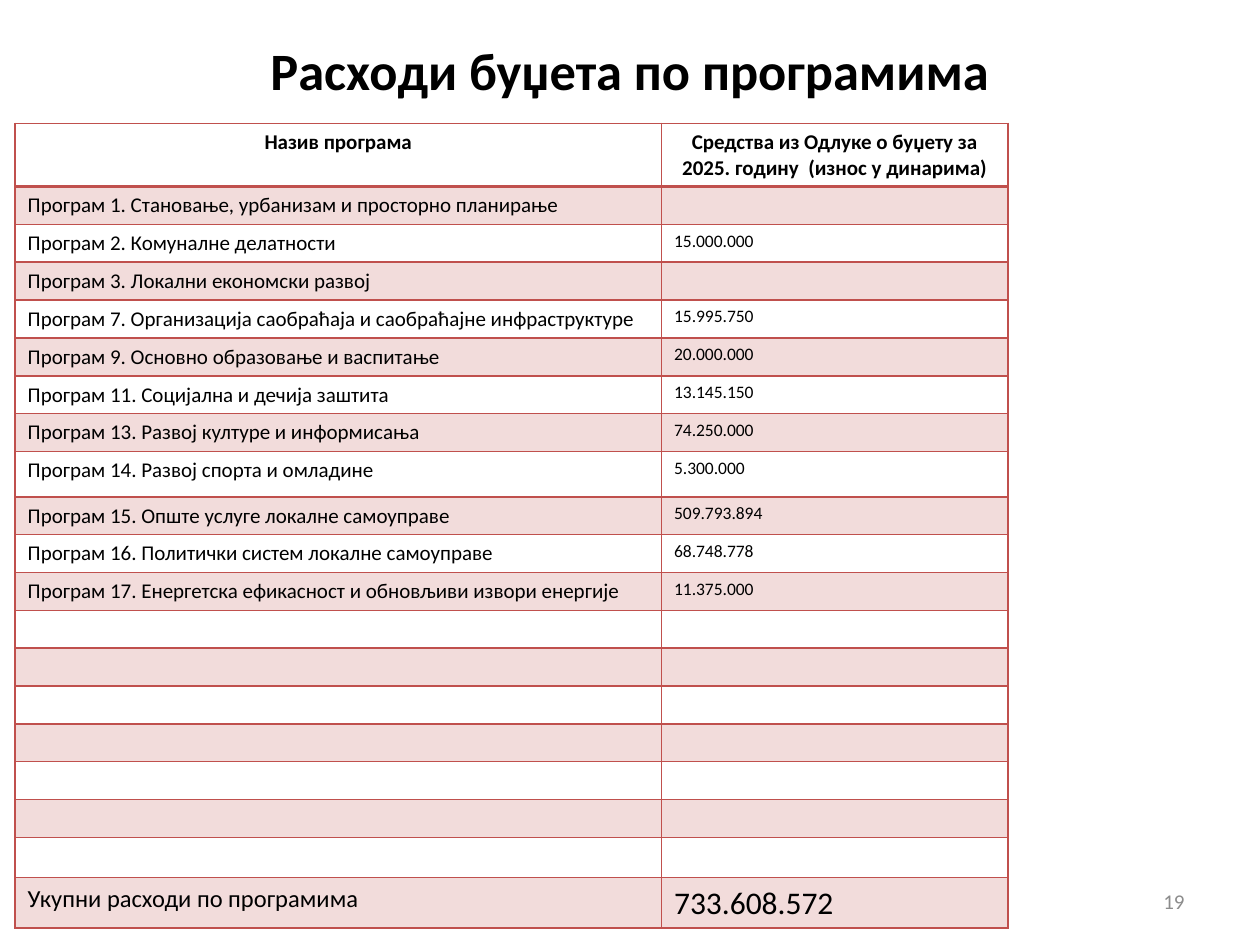
from typing import NamedTuple

from lxml.etree import SubElement
from pptx import Presentation
from pptx.dml.color import RGBColor
from pptx.enum.text import MSO_ANCHOR as Anchor, PP_ALIGN as Align
from pptx.oxml.ns import qn
from pptx.util import Inches, Pt

FONT = "Calibri"
BLACK, GRAY, WHITE = "000000", "8C8C8C", "FFFFFF"
RED, PINK = "C0504D", "F2DCDB"


class Row(NamedTuple):
    name: str = ""
    amount: str = ""
    height: float = 0.3
    name_size: int = 12
    amount_size: int = 10


HEADER = Row("Назив програма",
             "Средства из Одлуке о буџету за 2025. годину  (износ у динарима)",
             0.5, amount_size=12)
PROGRAMS = [
    Row("Програм 1. Становање, урбанизам и просторно планирање"),
    Row("Програм 2. Комуналне делатности", "15.000.000"),
    Row("Програм 3. Локални економски развој"),
    Row("Програм 7. Организација саобраћаја и саобраћајне инфраструктуре", "15.995.750"),
    Row("Програм 9. Основно образовање и васпитање", "20.000.000"),
    Row("Програм 11. Социјална и дечија заштита", "13.145.150"),
    Row("Програм 13. Развој културе и информисања", "74.250.000"),
    Row("Програм 14. Развој спорта и омладине", "5.300.000", 0.36),
    Row("Програм 15. Опште услуге локалне самоуправе", "509.793.894"),
    Row("Програм 16. Политички систем локалне самоуправе", "68.748.778"),
    Row("Програм 17. Енергетска ефикасност и обновљиви извори енергије", "11.375.000"),
]
SPARE = [Row()] * 6 + [Row(height=0.32)]
TOTAL = Row("Укупни расходи по програмима", "733.608.572", 0.4, 14, 18)
ROWS = [HEADER, *PROGRAMS, *SPARE, TOTAL]
COLUMNS = [5.13, 2.75]


def rgb(color: str) -> RGBColor:
    return RGBColor.from_string(color)


def write(tf, text: str, size: int, color: str = BLACK,
          bold: bool = False, align: Align = Align.LEFT) -> None:
    p = tf.paragraphs[0]
    if text:
        p.add_run().text = text
    p.alignment = align
    p.font.name, p.font.size, p.font.bold = FONT, Pt(size), bold
    p.font.color.rgb = rgb(color)


def set_borders(cell, top: int, bottom: int) -> None:
    tc_pr = cell._tc.get_or_add_tcPr()
    for tag, width in (("lnL", 1), ("lnR", 1), ("lnT", top), ("lnB", bottom)):
        ln = SubElement(tc_pr, qn(f"a:{tag}"), w=str(Pt(width)))
        fill = SubElement(ln, qn("a:solidFill"))
        SubElement(fill, qn("a:srgbClr"), val=RED)


def add_budget_table(slide, rows: list[Row]) -> None:
    table = slide.shapes.add_table(
        len(rows), len(COLUMNS), Inches(0.12), Inches(0.98),
        Inches(sum(COLUMNS)), Inches(sum(row.height for row in rows))).table
    table.first_row = table.horz_banding = False
    for column, width in zip(table.columns, COLUMNS):
        column.width = Inches(width)
    for i, row in enumerate(rows):
        table.rows[i].height = Inches(row.height)
        header = i == 0
        texts = ((row.name, row.name_size), (row.amount, row.amount_size))
        for cell, (text, size) in zip(table.rows[i].cells, texts):
            # A thick rule parts the header from the programs
            set_borders(cell, top=2 if i == 1 else 1, bottom=2 if header else 1)
            cell.fill.solid()
            cell.fill.fore_color.rgb = rgb(PINK if i % 2 else WHITE)
            write(cell.text_frame, text, size, bold=header,
                  align=Align.CENTER if header else Align.LEFT)


def main() -> None:
    prs = Presentation()
    prs.slide_width, prs.slide_height = Inches(10), Inches(7.5)
    s = prs.slides.add_slide(prs.slide_layouts[5])

    # Title
    title = s.shapes.title
    title.left, title.top = Inches(0.74), Inches(0.13)
    title.width, title.height = Inches(8.52), Inches(0.85)
    title.text_frame.vertical_anchor = Anchor.MIDDLE
    write(title.text_frame, "Расходи буџета по програмима", 30,
          bold=True, align=Align.CENTER)

    # Page number
    number = s.shapes.add_textbox(Inches(7.17), Inches(6.95), Inches(2.33), Inches(0.4))
    tf = number.text_frame
    tf.word_wrap = True
    tf.vertical_anchor = Anchor.MIDDLE
    write(tf, "19", 12, GRAY, align=Align.RIGHT)

    # Expenses by program
    add_budget_table(s, ROWS)

    prs.save("out.pptx")


if __name__ == "__main__":
    main()
